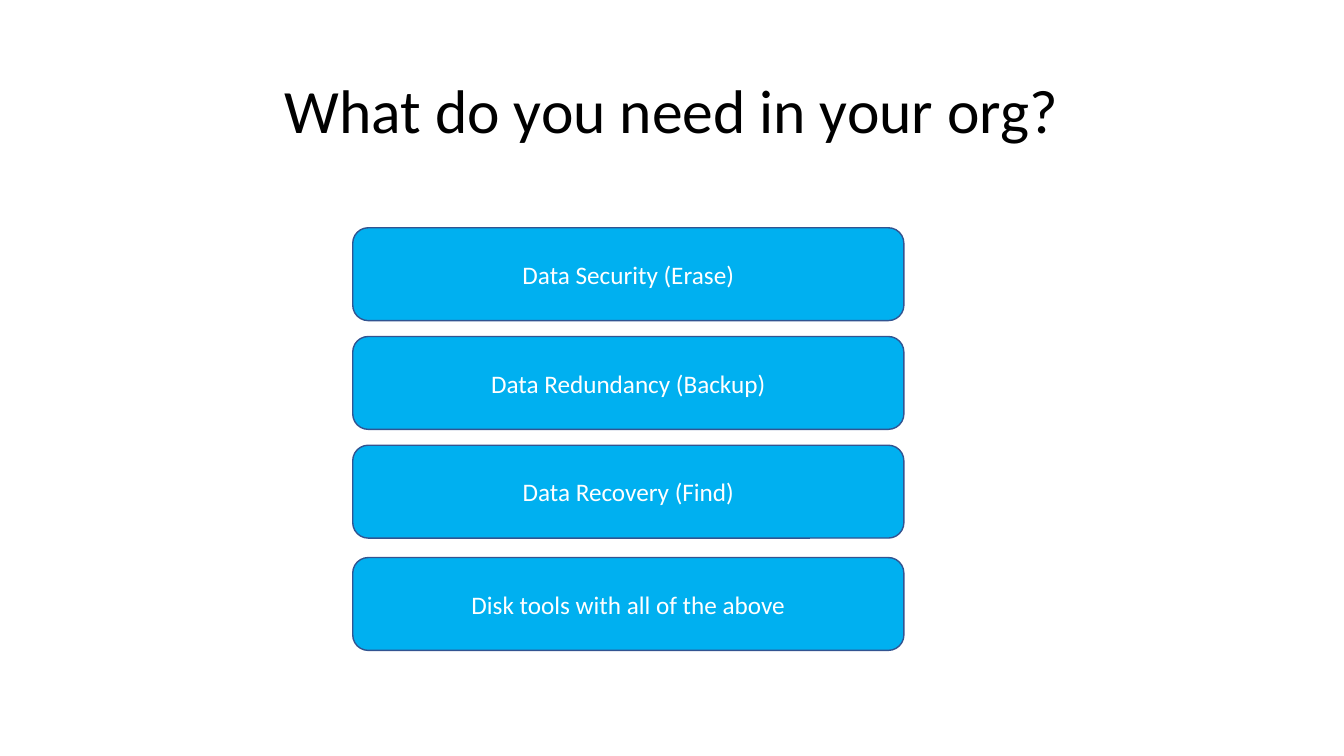
from pptx import Presentation
from pptx.dml.color import RGBColor
from pptx.enum.shapes import MSO_SHAPE as SHAPE
from pptx.enum.text import MSO_ANCHOR as ANCHOR, PP_ALIGN as ALIGN
from pptx.util import Cm, Pt

BLACK = RGBColor(0x00, 0x00, 0x00)
WHITE = RGBColor(0xFF, 0xFF, 0xFF)
SKY = RGBColor(0x00, 0xB0, 0xF0)
NAVY = RGBColor(0x32, 0x54, 0x91)

TITLE_FONT = {"name": "Calibri", "size": Pt(44)}
OPTION_FONT = {"name": "Calibri", "size": Pt(18)}

OPTIONS = [
    "Data Security (Erase)",
    "Data Redundancy (Backup)",
    "Data Recovery (Find)",
]
SUMMARY = "Disk tools with all of the above"
FIRST_TOP, PITCH, SUMMARY_TOP = 5.74, 2.74, 14.05


def write_text(sp, text, font, color):
    tf = sp.text_frame
    tf.word_wrap = True
    tf.vertical_anchor = ANCHOR.MIDDLE
    p = tf.paragraphs[0]
    p.alignment = ALIGN.CENTER
    r = p.add_run()
    r.text = text
    for key, value in font.items():
        setattr(r.font, key, value)
    r.font.color.rgb = color
    return p


def add_title(s, text):
    sp = s.shapes.add_textbox(Cm(2.33), Cm(1.01), Cm(29.21), Cm(3.68))
    p = write_text(sp, text, TITLE_FONT, BLACK)
    p.line_spacing = 0.9


def add_option(s, text, top):
    sp = s.shapes.add_shape(
        SHAPE.ROUNDED_RECTANGLE, Cm(8.89), Cm(top), Cm(13.89), Cm(2.34))
    sp.shadow.inherit = False
    sp.fill.solid()
    sp.fill.fore_color.rgb = SKY
    sp.line.color.rgb = NAVY
    sp.line.width = Pt(1)
    write_text(sp, text, OPTION_FONT, WHITE)


def main():
    prs = Presentation()
    prs.slide_width, prs.slide_height = Cm(33.87), Cm(19.05)
    s = prs.slides.add_slide(prs.slide_layouts[6])
    add_title(s, "What do you need in your org?")
    for i, text in enumerate(OPTIONS):
        add_option(s, text, FIRST_TOP + i * PITCH)
    add_option(s, SUMMARY, SUMMARY_TOP)
    prs.save("out.pptx")


if __name__ == "__main__":
    main()
